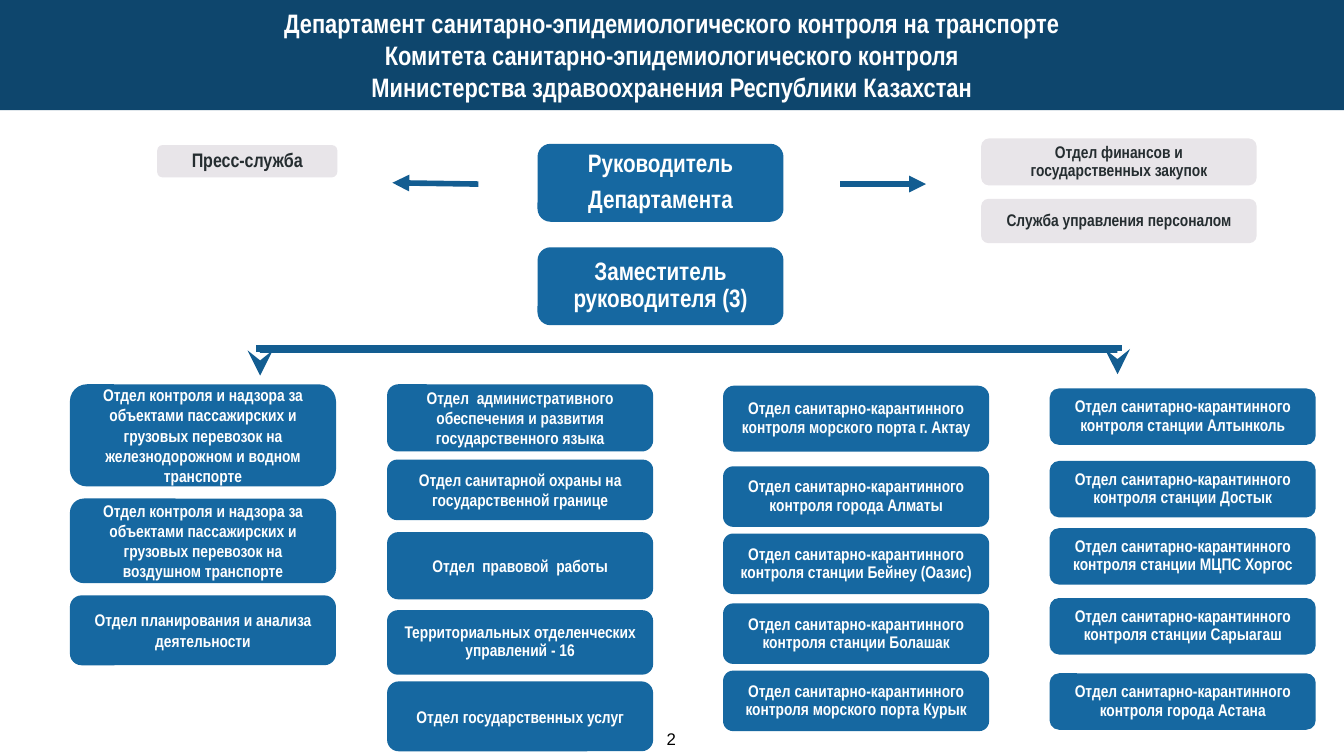
from typing import NamedTuple

from pptx import Presentation
from pptx.dml.color import RGBColor
from pptx.enum.shapes import MSO_CONNECTOR, MSO_SHAPE
from pptx.enum.text import MSO_ANCHOR, MSO_AUTO_SIZE, PP_ALIGN
from pptx.oxml.ns import qn
from pptx.util import Inches, Pt
from lxml.etree import SubElement

NAVY = RGBColor(0x0E, 0x46, 0x6D)
BLUE = RGBColor(0x16, 0x68, 0xA1)
ARROW_BLUE = RGBColor(0x13, 0x5D, 0x91)
GREY = RGBColor(0xE8, 0xE5, 0xE9)
DARK = RGBColor(0x25, 0x2D, 0x30)
WHITE = RGBColor(0xFF, 0xFF, 0xFF)
BLACK = RGBColor(0, 0, 0)


class Unit(NamedTuple):
    text: str
    x: float
    y: float
    w: float
    h: float
    size: float = 9
    fill: RGBColor = BLUE
    color: RGBColor = WHITE
    tight: bool = True


class Department(NamedTuple):
    text: str
    y: float
    h: float
    tight: bool = False


class Column(NamedTuple):
    x: float
    departments: list[Department]


def quarantine(place: str, y: float, h: float) -> Department:
    """Department of sanitary quarantine control at a place."""
    return Department(f"Отдел санитарно-карантинного контроля {place}", y, h, True)


LEADERS = [
    Unit("Руководитель\nДепартамента", 4, 1.07, 1.83, 0.58, 13.5),
    Unit("Заместитель руководителя (3)", 4, 1.84, 1.83, 0.58, 13.5),
    Unit("Пресс-служба", 1.17, 1.08, 1.34, 0.24, 10.5, GREY, DARK),
    Unit("Отдел финансов и государственных закупок", 7.3, 1.03, 2.05, 0.35, 9, GREY, DARK),
    Unit("Служба управления персоналом", 7.3, 1.48, 2.05, 0.33, 9, GREY, DARK),
]
SUPERVISION = "Отдел контроля и надзора за объектами пассажирских и грузовых перевозок на"
COLUMN_WIDTH = 1.98
COLUMNS = [
    Column(0.52, [
        Department(f"{SUPERVISION} железнодорожном и водном транспорте", 2.86, 0.76),
        Department(f"{SUPERVISION} воздушном транспорте", 3.71, 0.63),
        Department("Отдел планирования и анализа деятельности", 4.43, 0.52),
    ]),
    Column(2.88, [
        Department("Отдел  административного обеспечения и развития государственного языка",
                   2.86, 0.5),
        Department("Отдел санитарной охраны на государственной границе", 3.42, 0.45),
        Department("Отдел  правовой  работы", 3.96, 0.5),
        Department("Территориальных отделенческих управлений - 16", 4.54, 0.48, True),
        Department("Отдел государственных услуг", 5.07, 0.52),
    ]),
    Column(5.38, [
        quarantine("морского порта г. Актау", 2.87, 0.49),
        quarantine("города Алматы", 3.47, 0.45),
        quarantine("станции Бейнеу (Оазис)", 3.97, 0.45),
        quarantine("станции Болашак", 4.49, 0.45),
        quarantine("морского порта Курык", 4.99, 0.45),
    ]),
    Column(7.81, [
        quarantine("станции Алтынколь", 2.89, 0.42),
        quarantine("станции Достык", 3.43, 0.42),
        quarantine("станции МЦПС Хоргос", 3.93, 0.42),
        quarantine("станции Сарыагаш", 4.45, 0.42),
        quarantine("города Астана", 5.01, 0.42),
    ]),
]


def write(tf, text: str, *, size: float, color: RGBColor, font: str = "Arial Narrow",
          bold: bool = True, tight: bool = False, anchor=MSO_ANCHOR.MIDDLE,
          wrap: bool = True) -> None:
    """Fill a text frame with centred text, one paragraph a line."""
    tf.auto_size = MSO_AUTO_SIZE.NONE
    tf.word_wrap = wrap
    tf.vertical_anchor = anchor
    for i, line in enumerate(text.split("\n")):
        p = tf.paragraphs[0] if i == 0 else tf.add_paragraph()
        p.alignment = PP_ALIGN.CENTER
        if tight:
            p.line_spacing = 0.9
            p.space_after = Pt(0.35 * size)
        r = p.add_run()
        r.text = line
        r.font.name = font
        r.font.size = Pt(size)
        r.font.bold = bold
        r.font.color.rgb = color


def add_unit(s, unit: Unit) -> None:
    box = s.shapes.add_shape(MSO_SHAPE.ROUNDED_RECTANGLE, Inches(unit.x), Inches(unit.y),
                             Inches(unit.w), Inches(unit.h))
    box.shadow.inherit = False
    box.fill.solid()
    box.fill.fore_color.rgb = unit.fill
    box.line.fill.background()
    write(box.text_frame, unit.text, size=unit.size, color=unit.color, tight=unit.tight)


def add_arrow(s, kind, x1: float, y1: float, x2: float, y2: float, width: float,
              **ends: str):
    """Add a connector; ends maps headEnd and tailEnd to arrowhead types."""
    c = s.shapes.add_connector(kind, Inches(x1), Inches(y1), Inches(x2), Inches(y2))
    c.line.color.rgb = ARROW_BLUE
    c.line.width = Pt(width)
    ln = c.line._get_or_add_ln()
    SubElement(ln, qn("a:miter"), lim="800000")
    for end, head in ends.items():
        SubElement(ln, qn(f"a:{end}"), type=head)
    SubElement(c._element.spPr, qn("a:effectLst"))
    return c


def add_bracket(s) -> None:
    """Add the elbow connector that spans the columns, turned a quarter."""
    c = add_arrow(s, MSO_CONNECTOR.ELBOW, 5.13, 5.98, 5.12, -0.4, 4.5,
                  headEnd="stealth", tailEnd="stealth")
    spPr = c._element.spPr
    spPr.find(qn("a:xfrm")).set("rot", str(90 * 60000))
    guides = spPr.find(qn("a:prstGeom")).get_or_add_avLst()
    SubElement(guides, qn("a:gd"), name="adj1", fmla="val 2000000")


def main() -> None:
    prs = Presentation()
    prs.slide_width = Inches(10)
    prs.slide_height = prs.slide_width * 9 // 16
    s = prs.slides.add_slide(prs.slide_layouts[5])

    title = s.shapes.title
    title.left, title.top = Inches(0), Inches(0)
    title.width, title.height = prs.slide_width, Inches(0.82)
    title.fill.solid()
    title.fill.fore_color.rgb = NAVY
    write(title.text_frame,
          "Департамент санитарно-эпидемиологического контроля на транспорте\n"
          "Комитета санитарно-эпидемиологического контроля\n"
          "Министерства здравоохранения Республики Казахстан",
          size=14.25, color=WHITE, anchor=MSO_ANCHOR.TOP)

    for unit in LEADERS:
        add_unit(s, unit)
    for column in COLUMNS:
        for d in column.departments:
            add_unit(s, Unit(d.text, column.x, d.y, COLUMN_WIDTH, d.h, tight=d.tight))

    add_arrow(s, MSO_CONNECTOR.STRAIGHT, 2.92, 1.36, 3.56, 1.37, 3, headEnd="triangle")
    add_arrow(s, MSO_CONNECTOR.STRAIGHT, 6.89, 1.37, 6.25, 1.37, 3, headEnd="triangle")
    add_bracket(s)

    number = s.shapes.add_textbox(Inches(4.9), Inches(5.36), Inches(0.19), Inches(0.19))
    tf = number.text_frame
    tf.margin_left = tf.margin_right = tf.margin_top = tf.margin_bottom = Inches(0.06)
    write(tf, "2", size=9, color=BLACK, font="Arial", bold=False,
          anchor=MSO_ANCHOR.TOP, wrap=False)

    prs.save("out.pptx")


if __name__ == "__main__":
    main()
